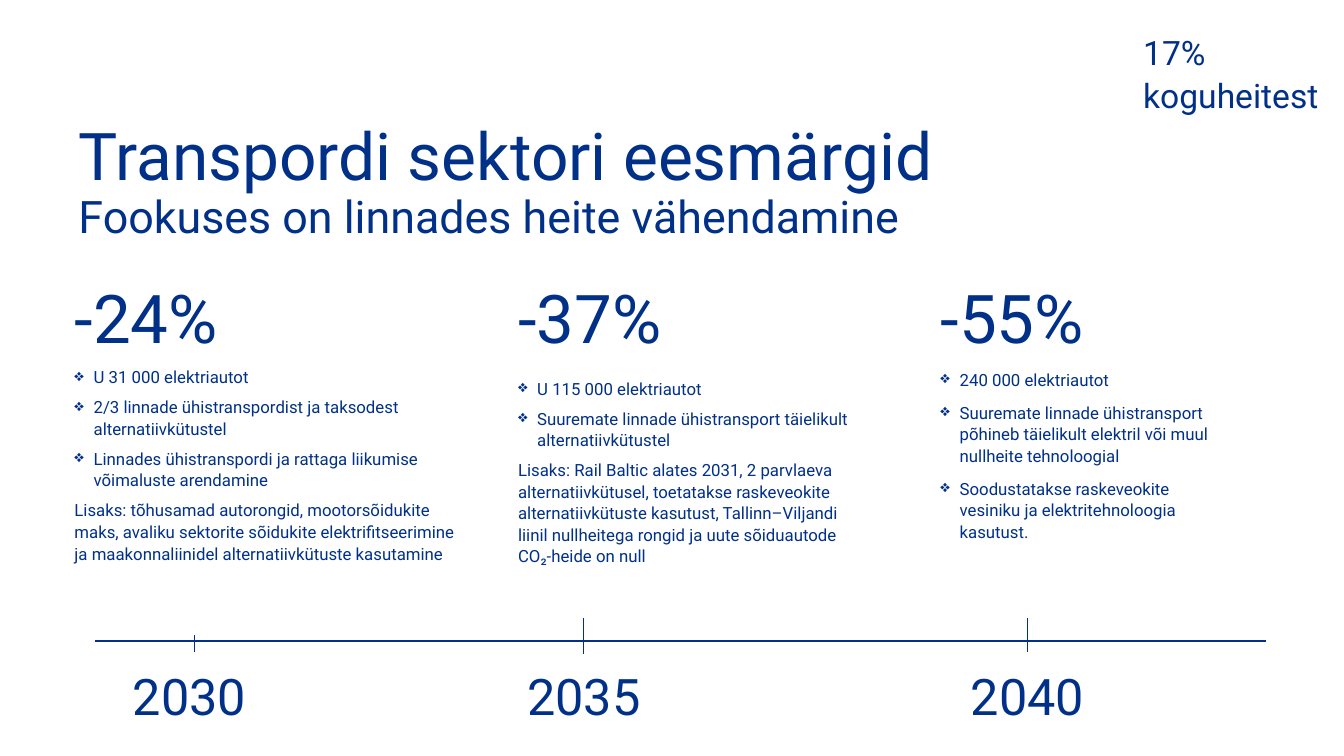
import pptx
import pptx.dml.color
import pptx.enum.shapes
import pptx.enum.text
import pptx.util
from lxml import etree
from pptx.util import Inches, Pt

COLOURS = {"navy": "003087", "white": "FFFFFF"}
FONT = "Roboto"
BULLET_INDENT = Inches(0.19)

# Column box, figure, bullets, closing text, and spacing in points:
# after the figure, before and after each later paragraph.
GOALS = [
    ((0.64, 2.64, 4.02, 3.02), "-24%",
     ["U 31 000 elektriautot",
      "2/3 linnade ühistranspordist ja taksodest alternatiivkütustel",
      "Linnades ühistranspordi ja rattaga liikumise võimaluste arendamine"],
     "Lisaks: tõhusamad autorongid, mootorsõidukite maks, avaliku sektorite "
     "sõidukite elektrifitseerimine ja maakonnaliinidel alternatiivkütuste kasutamine",
     (0, 6, 0)),
    ((5.04, 2.64, 3.63, 3.05), "-37%",
     ["U 115 000 elektriautot",
      "Suuremate linnade ühistransport täielikult alternatiivkütustel"],
     "Lisaks: Rail Baltic alates 2031, 2 parvlaeva alternatiivkütusel, toetatakse "
     "raskeveokite alternatiivkütuste kasutust, Tallinn–Viljandi liinil nullheitega "
     "rongid ja uute sõiduautode CO₂-heide on null",
     (8, 6, 0)),
    ((9.23, 2.64, 3.06, 2.8), "-55%",
     ["240 000 elektriautot",
      "Suuremate linnade ühistransport põhineb täielikult elektril või muul "
      "nullheite tehnoloogial",
      "Soodustatakse raskeveokite vesiniku ja elektritehnoloogia kasutust."],
     None,
     (8, 0, 8)),
]

# Year, label centre, tick x, tick top and bottom relative to the axis.
YEARS = [
    ("2030", 1.88, 1.93, -0.06, 0.11),
    ("2035", 5.79, 5.79, -0.23, 0.13),
    ("2040", 10.19, 10.19, -0.23, 0.11),
]


def colour(name):
    return pptx.dml.color.RGBColor.from_string(COLOURS[name])


def add_text_box(page, box, grow=True, margin=None):
    frame = page.shapes.add_textbox(*map(Inches, box)).text_frame
    frame.word_wrap = True
    sizing = pptx.enum.text.MSO_AUTO_SIZE
    frame.auto_size = sizing.SHAPE_TO_FIT_TEXT if grow else sizing.NONE
    if margin is not None:
        frame.margin_left = frame.margin_right = Inches(margin)
        frame.margin_top = frame.margin_bottom = Inches(margin)
    return frame


def write(para, text, size, spacing=1.07, before=0, after=0):
    para.text = text
    para.line_spacing = spacing
    para.space_before = Pt(before)
    para.space_after = Pt(after)
    for span in para.runs:
        span.font.name = FONT
        span.font.size = Pt(size)
        span.font.color.rgb = colour("navy")


def add_bullet(para):
    properties = para._p.get_or_add_pPr()
    properties.set("marL", str(BULLET_INDENT))
    properties.set("indent", str(-BULLET_INDENT))
    bullet = etree.SubElement(properties, pptx.oxml.ns.qn("a:buChar"))
    bullet.set("char", "❖")


def add_line(page, start, end):
    line = page.shapes.add_connector(
        pptx.enum.shapes.MSO_CONNECTOR.STRAIGHT, *map(Inches, start + end))
    line.line.color.rgb = colour("navy")
    line.line.width = Pt(1)
    etree.SubElement(line._element.spPr, pptx.oxml.ns.qn("a:effectLst"))


def add_heading(page, box):
    frame = add_text_box(page, box, grow=False)
    write(frame.paragraphs[0], "Transpordi sektori eesmärgid", 47, 0.9)
    write(frame.add_paragraph(), "Fookuses on linnades heite vähendamine", 32, 0.9)


def add_share(page, box):
    """Place the share of total emissions in the corner."""
    frame = add_text_box(page, box)
    write(frame.paragraphs[0], "17%\vkoguheitest", 24)


def add_goal(page, box, figure, bullets, closing, gaps):
    """Fill one column with a large figure and its measures."""
    after_figure, before, after = gaps
    frame = add_text_box(page, box)
    write(frame.paragraphs[0], figure, 48, after=after_figure)
    for text in bullets:
        para = frame.add_paragraph()
        add_bullet(para)
        write(para, text, 12, before=before, after=after)
    if closing:
        write(frame.add_paragraph(), closing, 12, before=before, after=after)


def add_timeline(page, left, axis, width):
    label_width, label_height = 1.84, 0.61
    add_line(page, (left, axis), (left + width, axis))
    for year, centre, tick, above, below in YEARS:
        add_line(page, (tick, axis + above), (tick, axis + below))
        box = (centre - label_width / 2, axis + 0.24, label_width, label_height)
        para = add_text_box(page, box, margin=0).paragraphs[0]
        write(para, year, 36, 1.0)
        para.alignment = pptx.enum.text.PP_ALIGN.CENTER


def main():
    deck = pptx.Presentation()
    deck.slide_width, deck.slide_height = Inches(13.33), Inches(7.5)
    page = deck.slides.add_slide(deck.slide_layouts[6])
    page.background.fill.solid()
    page.background.fill.fore_color.rgb = colour("white")
    add_timeline(page, 0.94, 6.36, 11.62)
    for goal in GOALS:
        add_goal(page, *goal)
    add_heading(page, (0.68, 1.18, 11.61, 0.57))
    add_share(page, (11.24, 0.24, 2.82, 0.94))
    deck.save("out.pptx")


if __name__ == "__main__":
    main()
